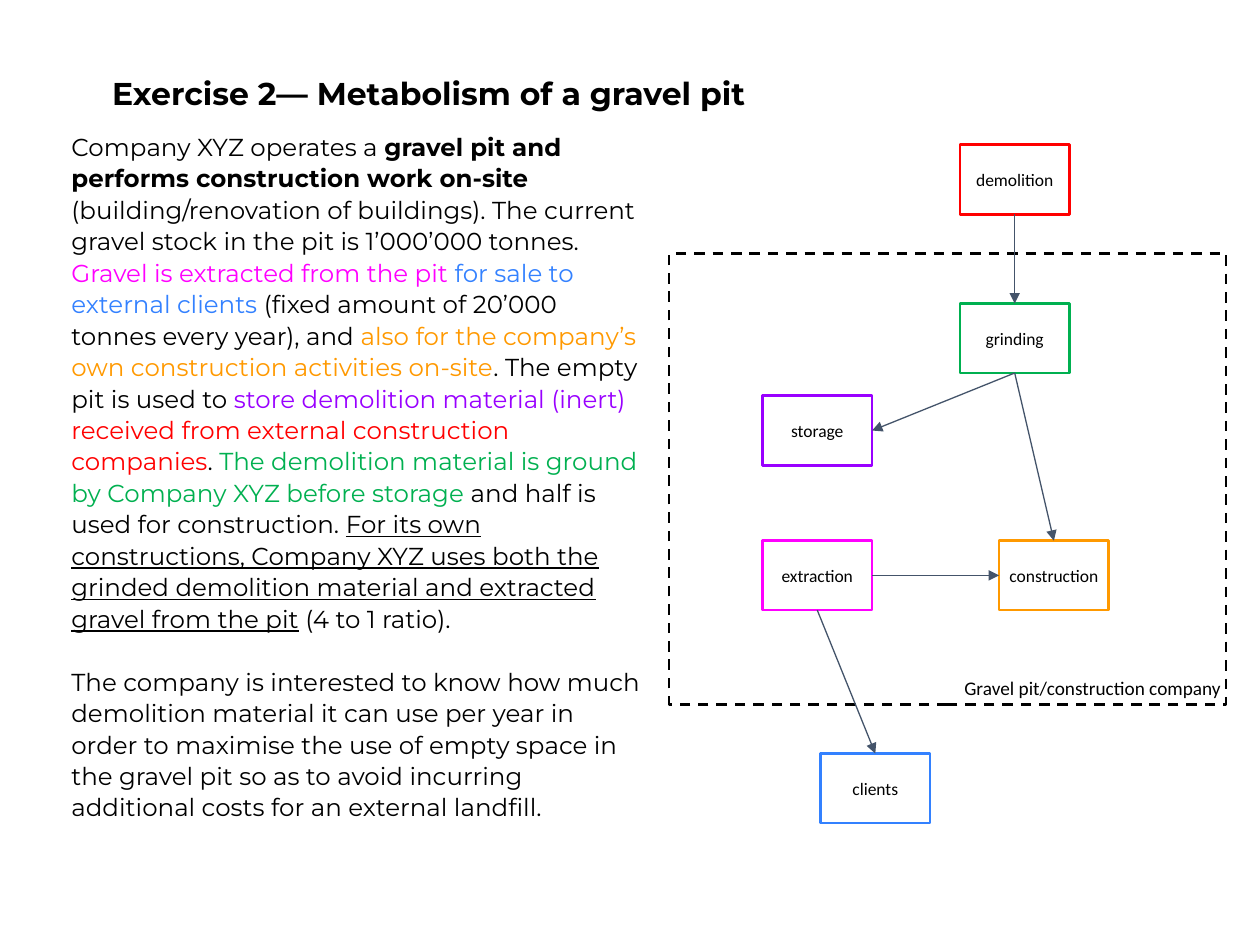
import pptx
import pptx.util
import pptx.dml.color
import pptx.enum.dml
import pptx.enum.shapes
import pptx.enum.text
import lxml.etree
from pptx.util import Cm, Pt

BLACK = "000000"
PINK, BLUE, AMBER = "FF00FF", "3381FF", "FF9900"
PURPLE, RED, GREEN, SLATE = "9900FF", "FF0000", "00B050", "44546A"

TITLE = [[("Exercise 2— Metabolism of a gravel pit", {"bold": True})]]
BODY = [
    [
        ("Company XYZ operates a ", {}),
        ("gravel pit and performs construction work on-site", {"bold": True}),
        (" (building/renovation of buildings). The current gravel stock in the pit is 1’000’000 tonnes. ", {}),
        ("Gravel is extracted from the pit ", {"color": PINK}),
        ("for sale to external clients", {"color": BLUE}),
        (" (fixed amount of 20’000 tonnes every year), and ", {}),
        ("also for the company’s own construction activities on-site", {"color": AMBER}),
        (". The empty pit is used to", {}),
        (" store demolition material (inert) ", {"color": PURPLE}),
        ("received from external construction companies", {"color": RED}),
        (". ", {}),
        ("The demolition material is ground by Company XYZ before storage", {"color": GREEN}),
        (" and half is used for construction. ", {}),
        ("For its own constructions, Company XYZ uses both the grinded demolition material "
         "and extracted gravel from the pit", {"under": True}),
        (" (4 to 1 ratio).", {}),
    ],
    [
        ("The company is interested to know how much demolition material it can use per year "
         "in order to maximise the use of empty space in the gravel pit so as to avoid "
         "incurring additional costs for an external landfill.", {}),
    ],
]
FRAME = (13.49, 5.11, 11.23, 9.09)
SIZE = (2.21, 1.4)
STEPS = {
    "extraction": (15.37, 10.9, PINK),
    "clients": (16.54, 15.19, BLUE),
    "construction": (20.14, 10.9, AMBER),
    "storage": (15.37, 7.98, PURPLE),
    "demolition": (19.35, 2.92, RED),
    "grinding": (19.35, 6.12, GREEN),
}
TOP, LEFT, BOTTOM, RIGHT = range(4)
FLOWS = [
    ("extraction", BOTTOM, "clients", TOP),
    ("extraction", RIGHT, "construction", LEFT),
    ("demolition", BOTTOM, "grinding", TOP),
    ("grinding", BOTTOM, "storage", RIGHT),
    ("grinding", BOTTOM, "construction", TOP),
]


def rgb(code):
    return pptx.dml.color.RGBColor.from_string(code)


def write(shape, paras, size=14, font="Montserrat", center=False, middle=False,
          inset=(0.25, 0.25), pitch=None, gap=0):
    frame = shape.text_frame
    frame.word_wrap = True
    frame.margin_left = frame.margin_right = Cm(inset[0])
    frame.margin_top = frame.margin_bottom = Cm(inset[1])
    anchor = pptx.enum.text.MSO_ANCHOR
    frame.vertical_anchor = anchor.MIDDLE if middle else anchor.TOP
    align = pptx.enum.text.PP_ALIGN
    for i, runs in enumerate(paras):
        para = frame.add_paragraph() if i else frame.paragraphs[0]
        para.alignment = align.CENTER if center else align.LEFT
        if pitch:
            para.line_spacing = pitch
        if i:
            para.space_before = Pt(gap)
        for text, style in runs:
            run = para.add_run()
            run.text = text
            run.font.name = font
            run.font.size = Pt(size)
            run.font.bold = style.get("bold", False)
            run.font.underline = style.get("under", False)
            run.font.color.rgb = rgb(style.get("color", BLACK))


def add_text(slide, box, paras, **style):
    shape = slide.shapes.add_textbox(*map(Cm, box))
    write(shape, paras, **style)


def add_box(slide, box, color):
    shape = slide.shapes.add_shape(pptx.enum.shapes.MSO_SHAPE.RECTANGLE, *map(Cm, box))
    shape.shadow.inherit = False
    shape.fill.background()
    shape.line.color.rgb = rgb(color)
    shape.line.width = Pt(1.5)
    return shape


def add_flow(slide, start, exit, end, entry):
    kind = pptx.enum.shapes.MSO_CONNECTOR.STRAIGHT
    flow = slide.shapes.add_connector(kind, 0, 0, 0, 0)
    flow.begin_connect(start, exit)
    flow.end_connect(end, entry)
    flow.line.color.rgb = rgb(SLATE)
    flow.line.width = Pt(0.75)
    tag = pptx.oxml.ns.qn
    lxml.etree.SubElement(flow.line._get_or_add_ln(), tag("a:tailEnd"), type="triangle")
    lxml.etree.SubElement(flow._element.spPr, tag("a:effectLst"))


def main():
    deck = pptx.Presentation()
    deck.slide_width, deck.slide_height = Cm(25.4), Cm(19.05)
    slide = deck.slides.add_slide(deck.slide_layouts[6])

    add_text(slide, (2.01, 1.24, 21.72, 1.4), TITLE, size=18)
    border = add_box(slide, FRAME, BLACK)
    border.line.dash_style = pptx.enum.dml.MSO_LINE.DASH

    nodes = {}
    for name, (left, top, color) in STEPS.items():
        nodes[name] = add_box(slide, (left, top, *SIZE), color)
        write(nodes[name], [[(name, {})]], size=10, font="Calibri",
              center=True, middle=True, inset=(0, 0))
    for start, exit, end, entry in FLOWS:
        add_flow(slide, nodes[start], exit, nodes[end], entry)

    add_text(slide, (18.69, 13.39, 6.68, 0.99), [[("Gravel pit/construction company", {})]],
             size=11, font="Calibri", center=True)
    add_text(slide, (1.19, 2.49, 12.07, 14.1), BODY, inset=(0.25, 0.13), pitch=1.07, gap=18)
    deck.save("out.pptx")


if __name__ == "__main__":
    main()
